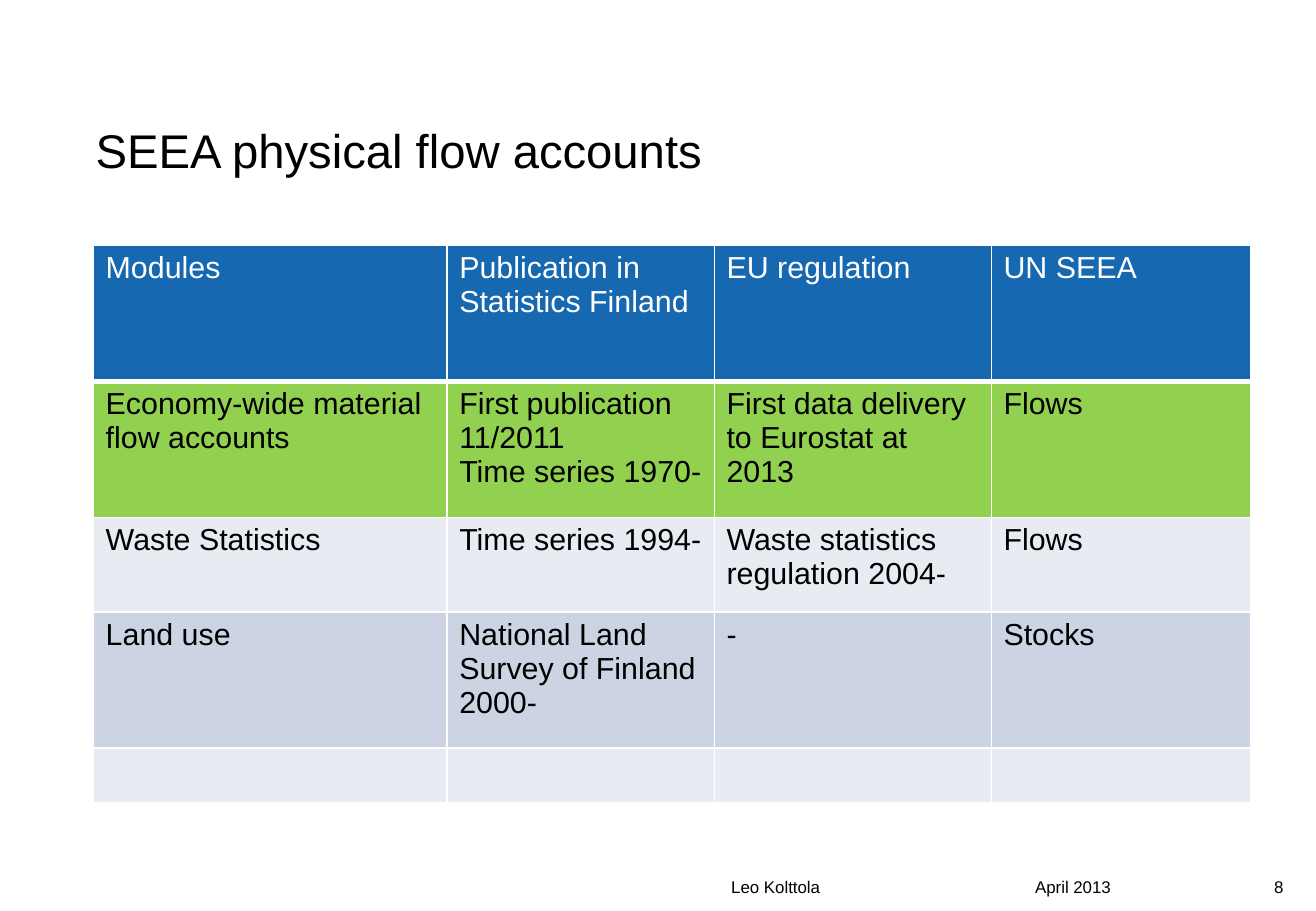
from dataclasses import dataclass

import pptx
import pptx.dml.color
import pptx.enum.text
import pptx.oxml
import pptx.oxml.ns
import pptx.util
from pptx.dml.color import RGBColor
from pptx.enum.text import MSO_ANCHOR, PP_ALIGN

WIDTH = pptx.util.Inches(10.83)
HEIGHT = pptx.util.Inches(7.5)
FONT = "Arial"
WHITE = RGBColor(0xFF, 0xFF, 0xFF)
BLACK = RGBColor(0x00, 0x00, 0x00)
BLUE = RGBColor(0x16, 0x68, 0xB1)
GREEN = RGBColor(0x92, 0xD0, 0x50)
PALE = RGBColor(0xE8, 0xEB, 0xF2)
GREY_BLUE = RGBColor(0xCC, 0xD4, 0xE4)


@dataclass(frozen=True)
class Label:
    """Text with its place in percent of the slide's width and height."""
    text: str
    left: float
    top: float
    width: float
    height: float
    size: int = 10
    align: PP_ALIGN = PP_ALIGN.LEFT
    anchor: MSO_ANCHOR = MSO_ANCHOR.TOP


@dataclass(frozen=True)
class ModuleRow:
    """One table row; its height is in percent of the slide's height."""
    entries: tuple[str, ...]
    height: float
    fill: RGBColor
    ink: RGBColor = BLACK
    bottom_line: int = 1


FOOTER_TOP, FOOTER_HEIGHT = 95.6, 5.6
LABELS = (
    Label("SEEA physical flow accounts", 6.37, 10.13, 86.52, 12.53,
          size=28, anchor=MSO_ANCHOR.MIDDLE),
    Label("Leo Kolttola", 54.66, FOOTER_TOP, 22.35, FOOTER_HEIGHT),
    Label("April 2013", 77.75, FOOTER_TOP, 15.42, FOOTER_HEIGHT),
    Label("8", 92.89, FOOTER_TOP, 5.54, FOOTER_HEIGHT, align=PP_ALIGN.RIGHT),
)

TABLE_LEFT, TABLE_TOP = 7.11, 26.93
COLUMN_WIDTHS = (26.87, 20.31, 21.05, 19.67)
TALL, MEDIUM, LOW = 14.93, 10.4, 6
MODULE_ROWS = (
    ModuleRow(("Modules", "Publication in Statistics Finland", "EU regulation",
               "UN SEEA"), TALL, BLUE, WHITE, bottom_line=3),
    ModuleRow(("Economy-wide material flow accounts",
               "First publication 11/2011\nTime series 1970-",
               "First data delivery to Eurostat at 2013", "Flows"), TALL, GREEN),
    ModuleRow(("Waste Statistics", "Time series 1994-",
               "Waste statistics regulation 2004-", "Flows"), MEDIUM, PALE),
    ModuleRow(("Land use", "National Land Survey of Finland\n2000-", "-",
               "Stocks"), TALL, GREY_BLUE),
    ModuleRow(("", "", "", ""), LOW, PALE),
)


def across(percent: float) -> int:
    return round(WIDTH * percent / 100)


def down(percent: float) -> int:
    return round(HEIGHT * percent / 100)


def write(frame, text: str, size: int, ink: RGBColor,
          align: PP_ALIGN = PP_ALIGN.LEFT) -> None:
    """Fill a text frame with one paragraph per line of text."""
    for index, line in enumerate(text.split("\n")):
        paragraph = frame.add_paragraph() if index else frame.paragraphs[0]
        paragraph.alignment = align
        paragraph.font.size = pptx.util.Pt(size)
        if line:
            run = paragraph.add_run()
            run.text = line
            run.font.name = FONT
            run.font.size = pptx.util.Pt(size)
            run.font.color.rgb = ink


def add_label(slide, label: Label) -> None:
    box = slide.shapes.add_textbox(across(label.left), down(label.top),
                                   across(label.width), down(label.height))
    frame = box.text_frame
    frame.word_wrap = True
    frame.vertical_anchor = label.anchor
    write(frame, label.text, label.size, BLACK, label.align)


def add_borders(cell, bottom_line: int) -> None:
    properties = cell._tc.get_or_add_tcPr()
    for side, points in (("L", 1), ("R", 1), ("T", 1), ("B", bottom_line)):
        properties.append(pptx.oxml.parse_xml(
            f'<a:ln{side} {pptx.oxml.ns.nsdecls("a")} w="{pptx.util.Pt(points)}">'
            f'<a:solidFill><a:srgbClr val="{WHITE}"/></a:solidFill></a:ln{side}>'))


def add_module_table(slide) -> None:
    table = slide.shapes.add_table(
        len(MODULE_ROWS), len(COLUMN_WIDTHS),
        across(TABLE_LEFT), down(TABLE_TOP), across(sum(COLUMN_WIDTHS)),
        down(sum(row.height for row in MODULE_ROWS))).table
    table.first_row = False
    table.horz_banding = False
    for column, width in zip(table.columns, COLUMN_WIDTHS):
        column.width = across(width)
    for table_row, module in zip(table.rows, MODULE_ROWS):
        table_row.height = down(module.height)
        for cell, entry in zip(table_row.cells, module.entries):
            add_borders(cell, module.bottom_line)
            cell.fill.solid()
            cell.fill.fore_color.rgb = module.fill
            write(cell.text_frame, entry, 18, module.ink)


def main() -> None:
    deck = pptx.Presentation()
    deck.slide_width, deck.slide_height = WIDTH, HEIGHT
    slide = deck.slides.add_slide(deck.slide_layouts[6])
    add_module_table(slide)
    for label in LABELS:
        add_label(slide, label)
    deck.save("out.pptx")


if __name__ == "__main__":
    main()
